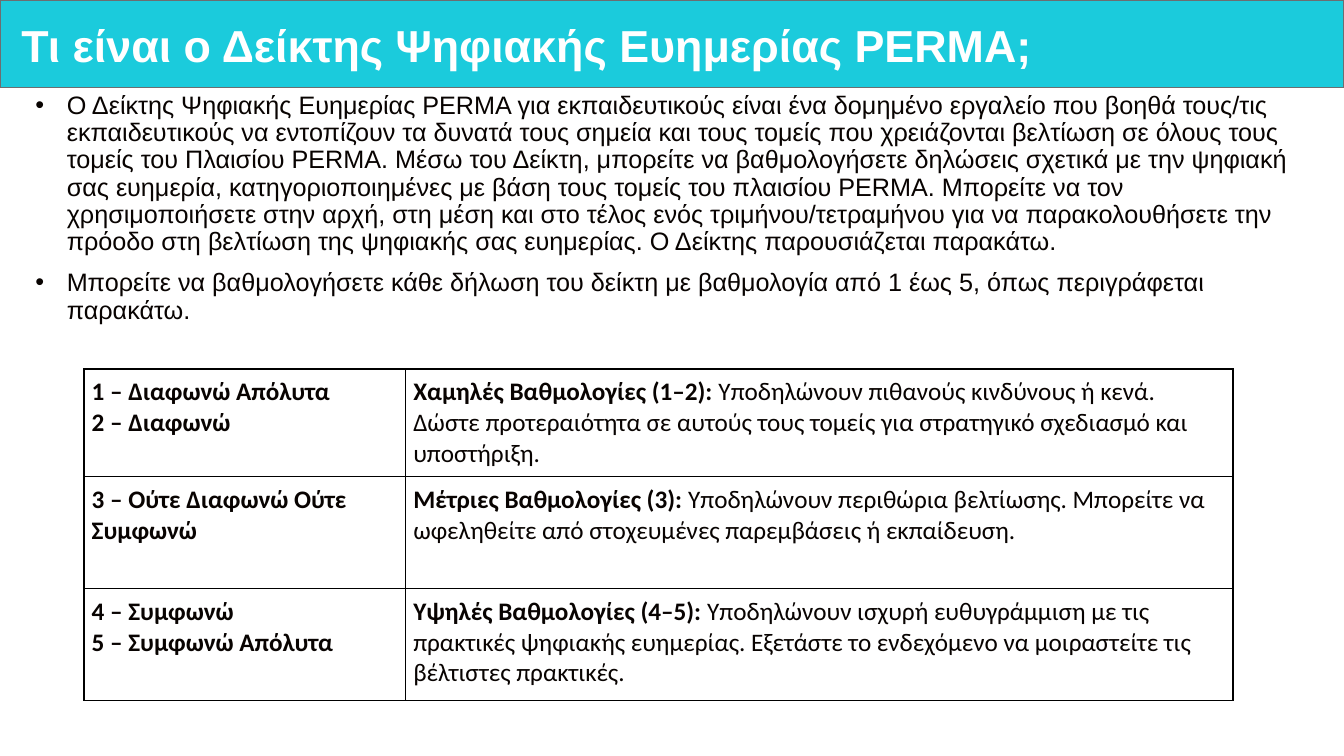
from lxml import etree
from pptx import Presentation
from pptx.dml import color
from pptx.enum import shapes, text
from pptx.oxml import ns
from pptx.util import Pt

INK = "080301"
TITLE = "Τι είναι ο Δείκτης Ψηφιακής Ευημερίας PERMA;"
BULLETS = [
    "Ο Δείκτης Ψηφιακής Ευημερίας PERMA για εκπαιδευτικούς είναι ένα δομημένο εργαλείο "
    "που βοηθά τους/τις εκπαιδευτικούς να εντοπίζουν τα δυνατά τους σημεία και τους τομείς "
    "που χρειάζονται βελτίωση σε όλους τους τομείς του Πλαισίου PERMA. Μέσω του Δείκτη, "
    "μπορείτε να βαθμολογήσετε δηλώσεις σχετικά με την ψηφιακή σας ευημερία, "
    "κατηγοριοποιημένες με βάση τους τομείς του πλαισίου PERMA. Μπορείτε να τον "
    "χρησιμοποιήσετε στην αρχή, στη μέση και στο τέλος ενός τριμήνου/τετραμήνου για να "
    "παρακολουθήσετε την πρόοδο στη βελτίωση της ψηφιακής σας ευημερίας. Ο Δείκτης "
    "παρουσιάζεται παρακάτω.",
    "Μπορείτε να βαθμολογήσετε κάθε δήλωση του δείκτη με βαθμολογία από 1 έως 5, "
    "όπως περιγράφεται παρακάτω.",
]
SCORES = [
    (["1 – Διαφωνώ Απόλυτα", "2 – Διαφωνώ"],
     "Χαμηλές Βαθμολογίες (1–2): ",
     "Υποδηλώνουν πιθανούς κινδύνους ή κενά. Δώστε προτεραιότητα σε αυτούς τους τομείς "
     "για στρατηγικό σχεδιασμό και υποστήριξη."),
    (["3 – Ούτε Διαφωνώ Ούτε Συμφωνώ"],
     "Μέτριες Βαθμολογίες (3): ",
     "Υποδηλώνουν περιθώρια βελτίωσης. Μπορείτε να ωφεληθείτε από στοχευμένες "
     "παρεμβάσεις ή εκπαίδευση."),
    (["4 – Συμφωνώ", "5 – Συμφωνώ Απόλυτα"],
     "Υψηλές Βαθμολογίες (4–5): ",
     "Υποδηλώνουν ισχυρή ευθυγράμμιση με τις πρακτικές ψηφιακής ευημερίας. Εξετάστε το "
     "ενδεχόμενο να μοιραστείτε τις βέλτιστες πρακτικές."),
]


def paint(target, shade):
    target.rgb = color.RGBColor.from_string(shade)


def apply(target, values):
    for name, value in values.items():
        setattr(target, name, value)


def place(shape, box):
    apply(shape, dict(zip(("left", "top", "width", "height"), map(Pt, box))))


def set_margins(target, *sizes):
    names = ("margin_left", "margin_top", "margin_right", "margin_bottom")
    apply(target, dict(zip(names, map(Pt, sizes))))


def add_span(para, words, size, name, shade, bold=False):
    span = para.add_run()
    span.text = words
    apply(span.font, {"size": Pt(size), "name": name, "bold": bold})
    paint(span.font.color, shade)


def add_heading(page, box):
    left, top, width, height = box
    band = page.shapes.add_shape(shapes.MSO_SHAPE.RECTANGLE, *map(Pt, box))
    band.shadow.inherit = False
    band.fill.solid()
    paint(band.fill.fore_color, "1BCBDC")
    paint(band.line.color, "6C6E70")
    band.line.width = Pt(1)
    page.shapes.element.insert(2, band.element)

    title = page.shapes.title
    place(title, (left + 8, top + 6.5, width - 20, height - 6.5))
    frame = title.text_frame
    apply(frame, {"word_wrap": True, "auto_size": text.MSO_AUTO_SIZE.NONE,
                  "vertical_anchor": text.MSO_ANCHOR.MIDDLE})
    set_margins(frame, 7.2, 4.3, 4.3, 4.3)
    para = frame.paragraphs[0]
    apply(para, {"alignment": text.PP_ALIGN.LEFT, "line_spacing": 0.9})
    add_span(para, TITLE, 32, "Arial", "FFFFFF", True)


def add_bullets(page, box):
    body = page.placeholders[1]
    place(body, box)
    frame = body.text_frame
    apply(frame, {"word_wrap": True, "auto_size": text.MSO_AUTO_SIZE.NONE,
                  "vertical_anchor": text.MSO_ANCHOR.TOP})
    set_margins(frame, 7.2, 3.6, 7.2, 3.6)
    for number, words in enumerate(BULLETS):
        para = frame.add_paragraph() if number else frame.paragraphs[0]
        apply(para, {"line_spacing": 0.9, "space_before": Pt(10)})
        properties = para._p.get_or_add_pPr()
        properties.set("marL", str(Pt(40.5)))
        properties.set("indent", str(Pt(-22.5)))
        add_span(para, words, 18, "Arial", INK)


def format_cell(cell):
    cell.fill.background()
    set_margins(cell, 5.5, 5.5, 5.5, 5.5)
    properties = cell._tc.get_or_add_tcPr()
    for position, side in enumerate(("lnL", "lnR", "lnT", "lnB")):
        border = etree.Element(ns.qn(f"a:{side}"), w=str(Pt(1)))
        fill = etree.SubElement(border, ns.qn("a:solidFill"))
        etree.SubElement(fill, ns.qn("a:srgbClr"), val="000000")
        properties.insert(position, border)


def add_scores(page, box):
    table = page.shapes.add_table(len(SCORES), 2, *map(Pt, box)).table
    apply(table, {"first_row": False, "horz_banding": False})
    label_width = 229.7
    for column, width in zip(table.columns, (label_width, box[2] - label_width)):
        column.width = Pt(width)
    for row, height in zip(table.rows, (69, 80, 80)):
        row.height = Pt(height)
    for row, (labels, lead, advice) in zip(table.rows, SCORES):
        label_cell, advice_cell = row.cells
        format_cell(label_cell)
        format_cell(advice_cell)
        para = label_cell.text_frame.paragraphs[0]
        for number, label in enumerate(labels):
            if number:
                para.add_line_break()
            add_span(para, label, 18, "Calibri", INK, True)
        para = advice_cell.text_frame.paragraphs[0]
        add_span(para, lead, 18, "Calibri", INK, True)
        add_span(para, advice, 18, "Calibri", INK)


def main():
    deck = Presentation()
    apply(deck, {"slide_width": Pt(960), "slide_height": Pt(540)})
    page = deck.slides.add_slide(deck.slide_layouts[1])
    add_heading(page, (0, 0, 960, 62.6))
    add_bullets(page, (0, 62.6, 940, 416))
    add_scores(page, (60, 263.5, 820.8, 229))
    deck.save("out.pptx")


if __name__ == "__main__":
    main()
